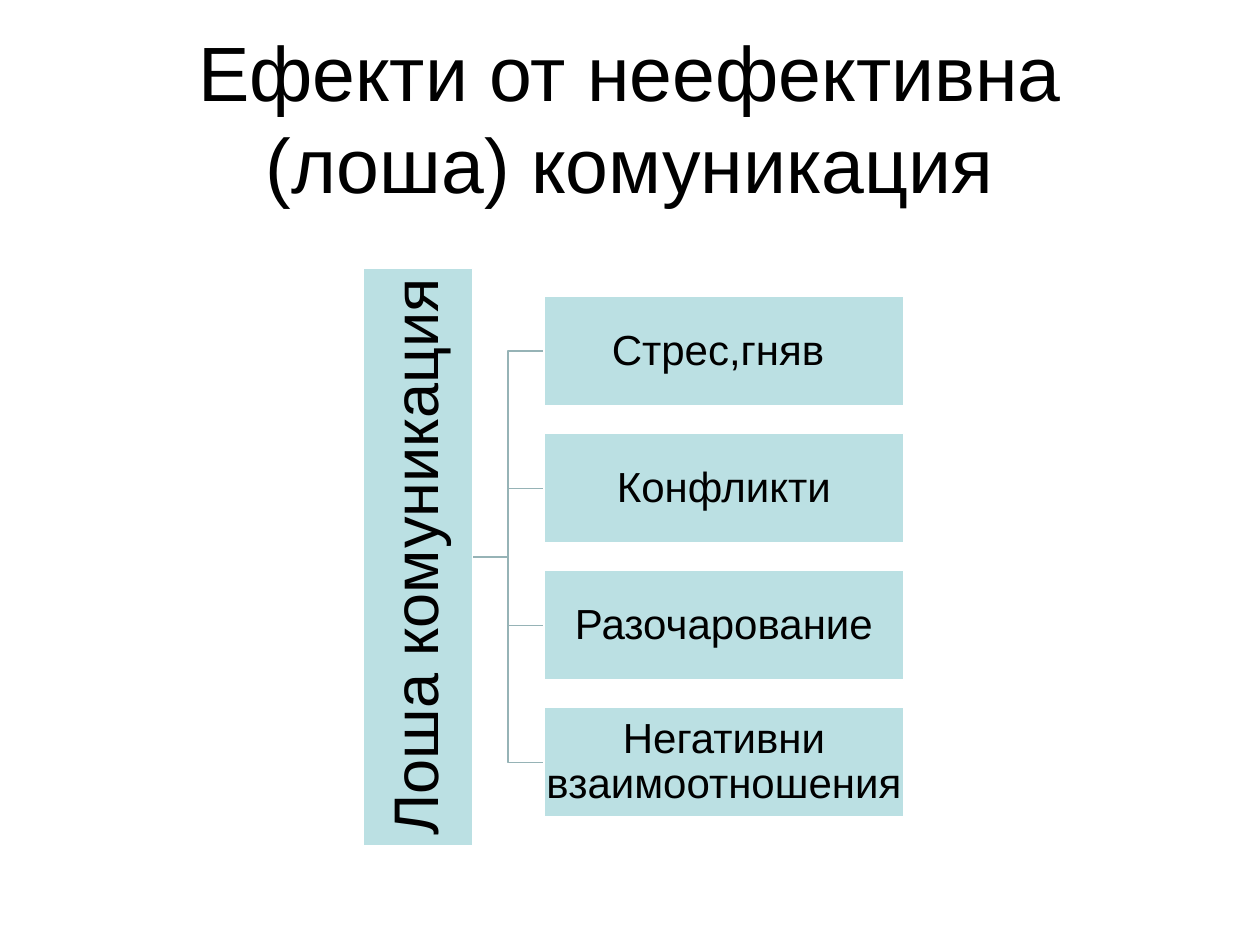
"""Build a slide showing the effects of poor communication as a horizontal tree."""
import pptx
import pptx.dml.color
import pptx.enum.shapes
import pptx.enum.text
import pptx.util

Inches = pptx.util.Inches
Pt = pptx.util.Pt
RGBColor = pptx.dml.color.RGBColor

TITLE = "Ефекти от неефективна (лоша) комуникация"
CAUSE = "Лоша комуникация"
EFFECTS = ["Стрес,гняв ", "Конфликти", "Разочарование", "Негативни взаимоотношения"]

BLACK = RGBColor(0x00, 0x00, 0x00)
WHITE = RGBColor(0xFF, 0xFF, 0xFF)
PALE_TEAL = RGBColor(0xBB, 0xE0, 0xE3)
BRANCH_TEAL = RGBColor(0x96, 0xB3, 0xB6)

BAR_LENGTH, BOX_WIDTH, BOX_HEIGHT = 4.58, 2.85, 0.87
BOX_PITCH = BOX_HEIGHT * 1.25
CAUSE_RIGHT, EFFECT_LEFT, MIDDLE = 3.75, 4.32, 4.42


def format_text(frame, text, size, inset=None):
    frame.text = text
    settings = {"word_wrap": True, "vertical_anchor": pptx.enum.text.MSO_ANCHOR.MIDDLE}
    if inset is not None:
        for side in ("left", "right", "top", "bottom"):
            settings[f"margin_{side}"] = Inches(inset)
    for name, value in settings.items():
        setattr(frame, name, value)
    paragraph = frame.paragraphs[0]
    paragraph.alignment = pptx.enum.text.PP_ALIGN.CENTER
    for name, value in {"name": "Arial", "size": Pt(size)}.items():
        setattr(paragraph.font, name, value)
    paragraph.font.color.rgb = BLACK
    return paragraph


def format_line(shape, color):
    shape.shadow.inherit = False
    shape.line.color.rgb = color
    shape.line.width = Pt(1)


def add_box(slide, text, center_x, center_y, width, size, inset, rotation=0):
    box = slide.shapes.add_shape(
        pptx.enum.shapes.MSO_SHAPE.RECTANGLE,
        Inches(center_x - width / 2), Inches(center_y - BOX_HEIGHT / 2),
        Inches(width), Inches(BOX_HEIGHT))
    box.rotation = rotation
    box.fill.solid()
    box.fill.fore_color.rgb = PALE_TEAL
    format_line(box, WHITE)
    format_text(box.text_frame, text, size, inset).line_spacing = 0.9


def add_branch(slide, effect_y):
    elbow_x = (CAUSE_RIGHT + EFFECT_LEFT) / 2
    corners = [(elbow_x, MIDDLE), (elbow_x, effect_y), (EFFECT_LEFT, effect_y)]
    builder = slide.shapes.build_freeform(Inches(CAUSE_RIGHT), Inches(MIDDLE))
    builder.add_line_segments([(Inches(x), Inches(y)) for x, y in corners], close=False)
    branch = builder.convert_to_shape()
    branch.fill.background()
    format_line(branch, BRANCH_TEAL)


def main():
    deck = pptx.Presentation()
    deck.slide_width, deck.slide_height = Inches(10), Inches(7.5)
    slide = deck.slides.add_slide(deck.slide_layouts[5])

    title = slide.shapes.title
    place = {"left": 0.5, "top": 0.3, "width": 9, "height": 1.25}
    for name, value in place.items():
        setattr(title, name, Inches(value))
    format_text(title.text_frame, TITLE, 44)

    first_y = MIDDLE - BOX_PITCH * (len(EFFECTS) - 1) / 2
    effect_rows = [first_y + BOX_PITCH * row for row in range(len(EFFECTS))]
    for effect_y in reversed(effect_rows):
        add_branch(slide, effect_y)
    add_box(slide, CAUSE, CAUSE_RIGHT - BOX_HEIGHT / 2, MIDDLE, BAR_LENGTH, 36, 0.03, 270)
    for effect, effect_y in zip(EFFECTS, effect_rows):
        add_box(slide, effect, EFFECT_LEFT + BOX_WIDTH / 2, effect_y, BOX_WIDTH, 24, 0.01)

    deck.save("out.pptx")


if __name__ == "__main__":
    main()
